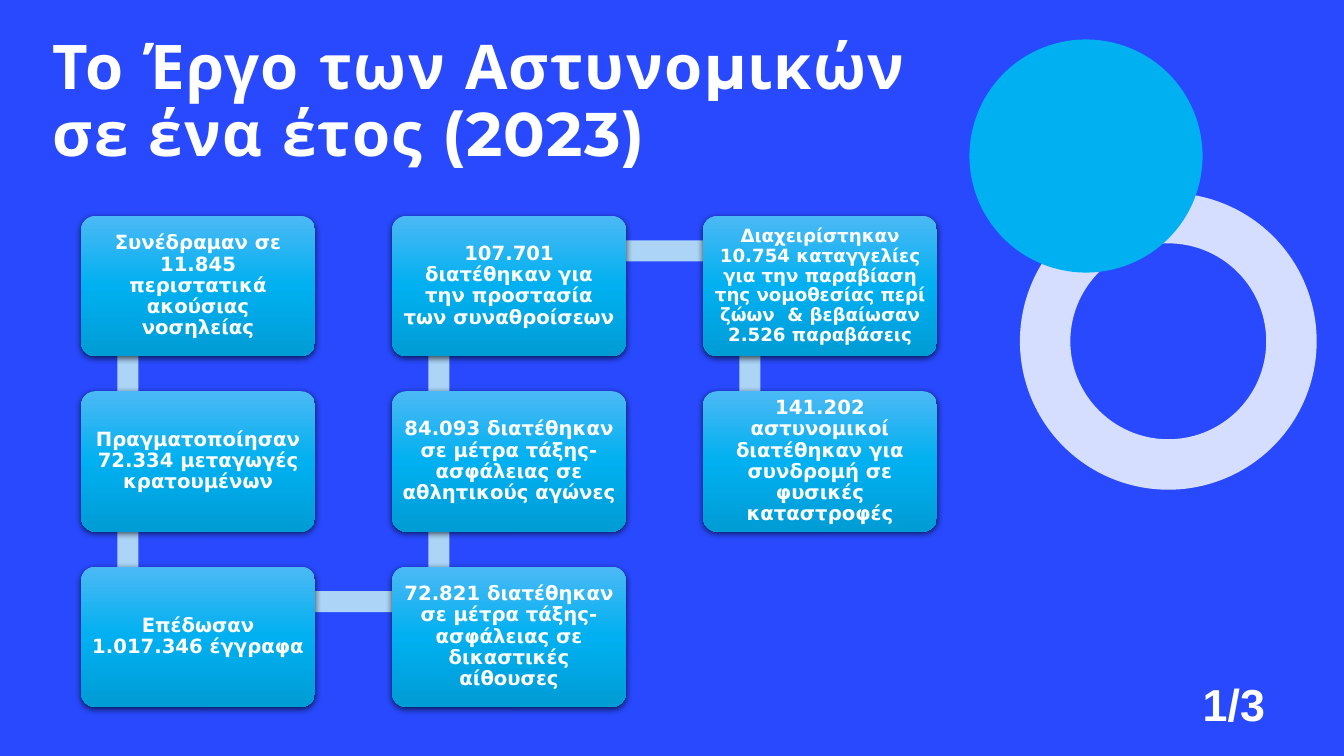
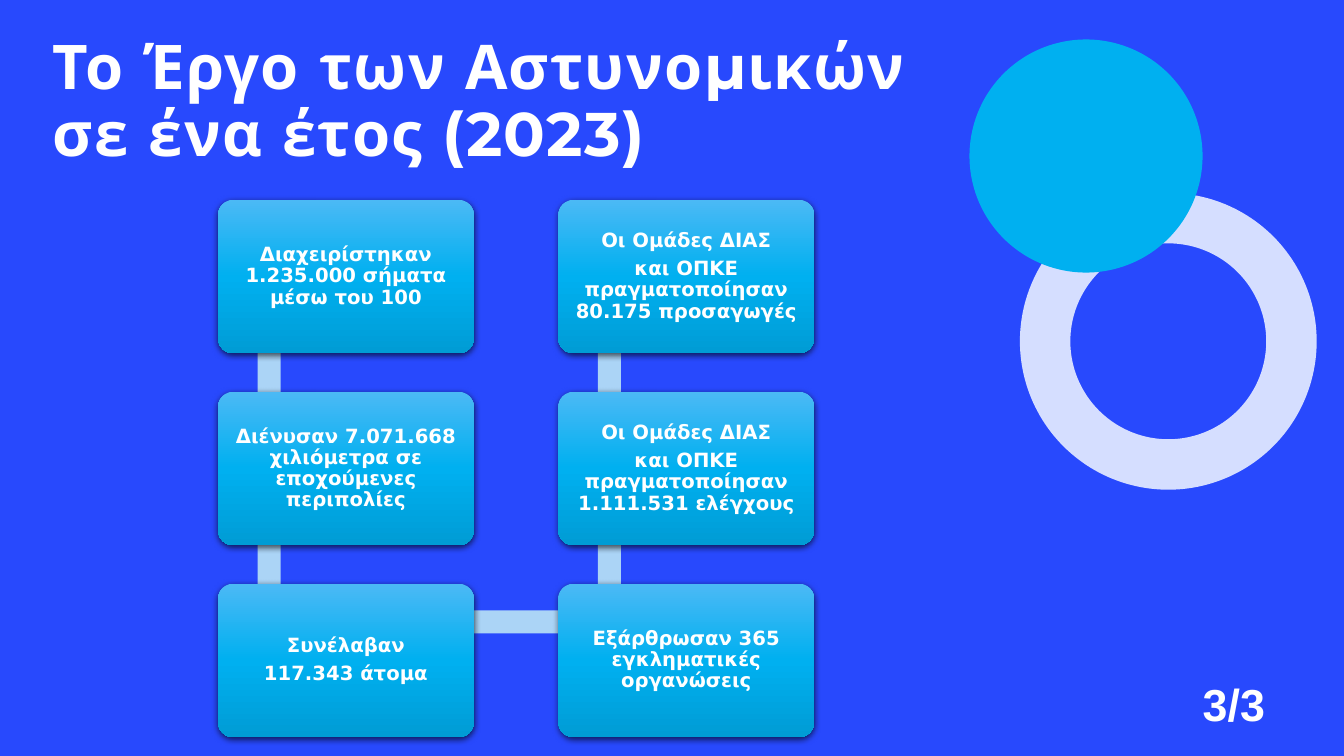
from dataclasses import dataclass

from pptx import Presentation
from pptx.dml.color import RGBColor
from pptx.enum.shapes import MSO_SHAPE as Preset
from pptx.enum.text import MSO_ANCHOR as Anchor, MSO_AUTO_SIZE as AutoSize, PP_ALIGN as Align
from pptx.oxml import parse_xml
from pptx.oxml.ns import nsdecls
from pptx.util import Pt


@dataclass(frozen=True)
class Theme:
    background: str = "2849FD"
    ring: str = "D5DEFF"
    disc: str = "00B0F0"
    bar: str = "ABD4F6"
    text: str = "FFFFFF"
    shadow: str = "000000"
    box_gradient: tuple = ((0, "4BB9F5"), (50, "00B0F0"), (100, "009CD5"))
    title_font: str = "Montserrat"
    box_font: str = "DejaVu Sans"
    page_font: str = "Arial"
    title_size: int = 44
    page_size: int = 32
    box_size: int = 14
    dense_box_size: int = 13


theme = Theme()
TITLE = "Το Έργο των Αστυνομικών σε ένα έτος (2023)"
ROWS = 3

# Each box is a list of paragraphs; boxes follow the path down, up, down
SLIDES = [
    dict(
        page="1/3", left=58, top=154.2, width=167,
        boxes=[
            ["Συνέδραμαν σε 11.845 περιστατικά ακούσιας νοσηλείας"],
            ["Πραγματοποίησαν 72.334 μεταγωγές κρατουμένων"],
            ["Επέδωσαν 1.017.346 έγγραφα"],
            ["72.821 διατέθηκαν σε μέτρα τάξης- ασφάλειας σε δικαστικές αίθουσες"],
            ["84.093 διατέθηκαν σε μέτρα τάξης- ασφάλειας σε αθλητικούς αγώνες"],
            ["107.701 διατέθηκαν για την προστασία των συναθροίσεων"],
            ["Διαχειρίστηκαν 10.754 καταγγελίες για την παραβίαση της νομοθεσίας "
             "περί ζώων  & βεβαίωσαν 2.526 παραβάσεις"],
            ["141.202 αστυνομικοί διατέθηκαν για συνδρομή σε φυσικές καταστροφές"],
        ],
    ),
    dict(
        page="3/3", left=155.7, top=142.7, width=182.8,
        boxes=[
            ["Διαχειρίστηκαν 1.235.000 σήματα μέσω του 100"],
            ["Διένυσαν 7.071.668 χιλιόμετρα σε εποχούμενες περιπολίες"],
            ["Συνέλαβαν", "117.343 άτομα"],
            ["Εξάρθρωσαν 365 εγκληματικές οργανώσεις"],
            ["Οι Ομάδες ΔΙΑΣ", "και ΟΠΚΕ πραγματοποίησαν 1.111.531 ελέγχους"],
            ["Οι Ομάδες ΔΙΑΣ", "και ΟΠΚΕ πραγματοποίησαν 80.175 προσαγωγές"],
        ],
    ),
]


def add_flat_shape(slide, preset, left, top, width, height, color=None):
    shape = slide.shapes.add_shape(preset, Pt(left), Pt(top), Pt(width), Pt(height))
    shape.shadow.inherit = False
    shape.line.fill.background()
    if color:
        shape.fill.solid()
        shape.fill.fore_color.rgb = RGBColor.from_string(color)
    return shape


def add_text(paragraph, text, font, size):
    run = paragraph.add_run()
    run.text = text
    run.font.name = font
    run.font.size = Pt(size)
    run.font.bold = True
    run.font.color.rgb = RGBColor.from_string(theme.text)
    return run


presentation = Presentation()
presentation.slide_width = Pt(960)
presentation.slide_height = Pt(540)
layout = presentation.slide_layouts.get_by_name("Title Only")
slides = [presentation.slides.add_slide(layout) for _ in SLIDES]

# Shared layout: background, ring and disc
layout.background.fill.solid()
layout.background.fill.fore_color.rgb = RGBColor.from_string(theme.background)
ring = add_flat_shape(slides[0], Preset.DONUT, 728.5, 137.8, 212, 212, theme.ring)
ring.adjustments[0] = 0.17
disc = add_flat_shape(slides[0], Preset.OVAL, 692.5, 28.2, 166.5, 166.5, theme.disc)
for shape_id, decoration in enumerate((ring, disc), start=20):
    decoration.element.nvSpPr.cNvPr.set("id", str(shape_id))
    layout.shapes.element.append(decoration.element)

# Box finish: three-stop gradient and a soft shadow
stops = "".join(
    f'<a:gs pos="{position * 1000}"><a:srgbClr val="{color}"/></a:gs>'
    for position, color in theme.box_gradient
)
GRADIENT = (
    f'<a:gradFill {nsdecls("a")} rotWithShape="1"><a:gsLst>{stops}</a:gsLst>'
    '<a:lin ang="5400000" scaled="0"/></a:gradFill>'
)
SHADOW = (
    f'<a:outerShdw {nsdecls("a")} blurRad="{Pt(4.5)}" dist="{Pt(1.5)}" dir="5400000" '
    f'algn="ctr" rotWithShape="0"><a:srgbClr val="{theme.shadow}">'
    '<a:alpha val="63000"/></a:srgbClr></a:outerShdw>'
)

for slide, content in zip(slides, SLIDES):
    # Title
    title = slide.shapes.title
    title.left, title.top, title.width, title.height = Pt(37.5), Pt(21), Pt(672), Pt(105)
    frame = title.text_frame
    frame.margin_left = frame.margin_top = frame.margin_right = frame.margin_bottom = 0
    frame.vertical_anchor = Anchor.MIDDLE
    frame.word_wrap = True
    frame.auto_size = AutoSize.NONE
    paragraph = frame.paragraphs[0]
    paragraph.alignment = Align.LEFT
    paragraph.line_spacing = 0.9
    run = add_text(paragraph, TITLE, theme.title_font, theme.title_size)
    run.font.element.set("spc", "100") if hasattr(run.font, "element") else run._r.get_or_add_rPr().set("spc", "100")

    # Page counter
    counter = slide.shapes.add_textbox(Pt(852), Pt(479.5), Pt(86), Pt(46))
    counter.text_frame.word_wrap = True
    add_text(counter.text_frame.paragraphs[0], content["page"], theme.page_font, theme.page_size)

    # Grid: every measure follows from the box width
    width = content["width"]
    height, thickness = 0.6 * width, 0.09 * width
    corners = []
    for index in range(len(content["boxes"])):
        column, step = divmod(index, ROWS)
        row = step if column % 2 == 0 else ROWS - 1 - step
        corners.append((content["left"] + column * 1.33 * width,
                        content["top"] + row * 0.75 * width))

    # Bars joining each box to the next
    for start, end in zip(corners, corners[1:]):
        left = min(start[0], end[0]) + 0.2 * width
        top = min(start[1], end[1]) + 0.15 * width
        if start[0] == end[0]:
            add_flat_shape(slide, Preset.RECTANGLE, left - thickness / 2, top,
                           thickness, abs(end[1] - start[1]), theme.bar)
        else:
            add_flat_shape(slide, Preset.RECTANGLE, left, top - thickness / 2,
                           end[0] - start[0], thickness, theme.bar)

    # Boxes
    for (left, top), lines in zip(corners, content["boxes"]):
        box = add_flat_shape(slide, Preset.ROUNDED_RECTANGLE, left, top, width, height)
        box.adjustments[0] = 0.1
        properties = box.element.spPr
        properties.insert(2, parse_xml(GRADIENT))
        properties[-1].append(parse_xml(SHADOW))

        dense = len(lines[0]) > 90
        frame = box.text_frame
        margin = Pt(3.9 if dense else 4.2)
        frame.margin_left = frame.margin_top = frame.margin_right = frame.margin_bottom = margin
        frame.vertical_anchor = Anchor.MIDDLE
        frame.word_wrap = True
        for number, line in enumerate(lines):
            paragraph = frame.add_paragraph() if number else frame.paragraphs[0]
            paragraph.alignment = Align.CENTER
            paragraph.line_spacing = 0.9
            paragraph.space_after = Pt(5)
            add_text(paragraph, line, theme.box_font,
                     theme.dense_box_size if dense else theme.box_size)

presentation.save("out.pptx")
